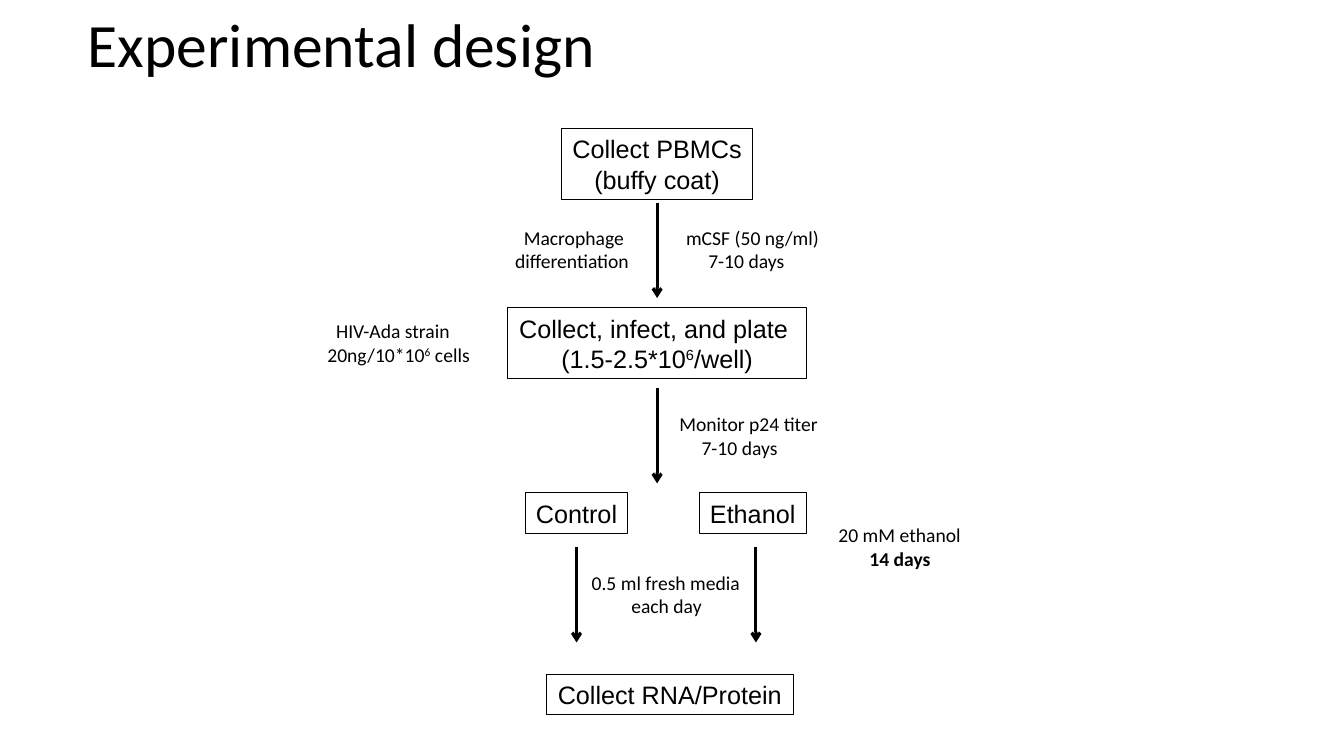
from lxml import etree
from pptx import Presentation
from pptx.dml.color import RGBColor
from pptx.enum import shapes, text
from pptx.oxml.ns import qn
from pptx.util import Cm, Pt

COLORS = {"ink": "000000", "paper": "FFFFFF"}
TITLE = "Experimental design"
ARROW_LENGTH = 2.4
LABEL_HEIGHT = 1.45
LINE_HEIGHTS = {1: 1.02, 2: 1.8}  # box height by number of lines

# All lengths in cm. A line of text is a list of runs; "^" marks a superscript run.
# Steps: centre x, top, width, lines
STEPS = [
    (16.56, 3.23, 4.83, [["Collect PBMCs"], ["(buffy coat)"]]),
    (16.56, 7.75, 7.52, [["Collect, infect, and plate "], ["(1.5-2.5*10", "^6", "/well)"]]),
    (14.53, 12.42, 2.59, [["Control"]]),
    (18.97, 12.42, 2.69, [["Ethanol"]]),
    (16.88, 16.99, 6.22, [["Collect RNA/Protein"]]),
]
# Arrows: x, top
ARROWS = [(16.56, 5.11), (16.56, 9.78), (14.53, 13.79), (19.05, 13.79)]
# Labels: left, top, width, lines as (indent, bold, runs)
LABELS = [
    (17.04, 5.56, 3.89, [(0, False, ["mCSF (50 ng/ml)"]), (0.56, False, ["7-10 days"])]),
    (12.73, 5.56, 3.43, [(0.22, False, ["Macrophage"]), (0, False, ["differentiation"])]),
    (8.0, 7.92, 4.42, [(0.22, False, ["HIV-Ada strain"]),
                       (0, False, ["20ng/10*10", "^6", " cells"])]),
    (16.87, 10.26, 4.04, [(0, False, ["Monitor p24 titer"]), (0.56, False, ["7-10 days"])]),
    (20.88, 13.06, 3.63, [(0, False, ["20 mM ethanol"]), (0.78, True, ["14 days"])]),
    (14.66, 14.25, 4.39, [(0, False, ["0.5 ml fresh media"]), (1.0, False, ["each day"])]),
]


def rgb(name):
    return RGBColor.from_string(COLORS[name])


def add_run(p, words, font, size, bold=False):
    r = p.add_run()
    r.text = words.lstrip("^")
    r.font.name, r.font.size, r.font.bold = font, Pt(size), bold
    r.font.color.rgb = rgb("ink")
    if words.startswith("^"):
        r._r.get_or_add_rPr().set("baseline", "30000")


def fill_text(tf, lines, font, size, align):
    """Write lines of (indent, bold, runs) into a frame that fits its text."""
    tf.word_wrap = False
    tf.auto_size = text.MSO_AUTO_SIZE.SHAPE_TO_FIT_TEXT
    for i, (indent, bold, runs) in enumerate(lines):
        p = tf.add_paragraph() if i else tf.paragraphs[0]
        p.alignment = align
        if indent:
            p._p.get_or_add_pPr().set("marL", str(Cm(indent)))
        for words in runs:
            add_run(p, words, font, size, bold)


def add_title(s):
    sp = s.shapes.title
    sp.left, sp.top, sp.width, sp.height = Cm(1.96), Cm(0.05), Cm(29.21), Cm(2.29)
    tf = sp.text_frame
    tf.auto_size = text.MSO_AUTO_SIZE.NONE
    tf.vertical_anchor = text.MSO_ANCHOR.MIDDLE
    p = tf.paragraphs[0]
    p.alignment, p.line_spacing = text.PP_ALIGN.LEFT, 0.9
    add_run(p, TITLE, "Calibri", 44)


def add_step(s, center, top, width, lines):
    sp = s.shapes.add_shape(shapes.MSO_SHAPE.RECTANGLE, Cm(center - width / 2), Cm(top),
                            Cm(width), Cm(LINE_HEIGHTS[len(lines)]))
    sp.shadow.inherit = False
    sp.fill.background()
    sp.line.color.rgb, sp.line.width = rgb("ink"), Pt(0.75)
    fill_text(sp.text_frame, [(0, False, runs) for runs in lines],
              "Arial", 18, text.PP_ALIGN.CENTER)


def add_arrow(s, x, top):
    c = s.shapes.add_connector(shapes.MSO_CONNECTOR.STRAIGHT,
                               Cm(x), Cm(top), Cm(x), Cm(top + ARROW_LENGTH))
    c.line.color.rgb, c.line.width = rgb("ink"), Pt(2.25)
    etree.SubElement(c.line._get_or_add_ln(), qn("a:tailEnd"), type="arrow")
    etree.SubElement(c._element.spPr, qn("a:effectLst"))


def add_label(s, left, top, width, lines):
    sp = s.shapes.add_textbox(Cm(left), Cm(top), Cm(width), Cm(LABEL_HEIGHT))
    fill_text(sp.text_frame, lines, "Calibri", 14, text.PP_ALIGN.LEFT)


def main():
    prs = Presentation()
    prs.slide_width, prs.slide_height = Cm(33.87), Cm(19.05)
    s = prs.slides.add_slide(prs.slide_layouts[5])
    s.background.fill.solid()
    s.background.fill.fore_color.rgb = rgb("paper")
    add_title(s)
    for step in STEPS:
        add_step(s, *step)
    for arrow in ARROWS:
        add_arrow(s, *arrow)
    for label in LABELS:
        add_label(s, *label)
    prs.save("out.pptx")


if __name__ == "__main__":
    main()
